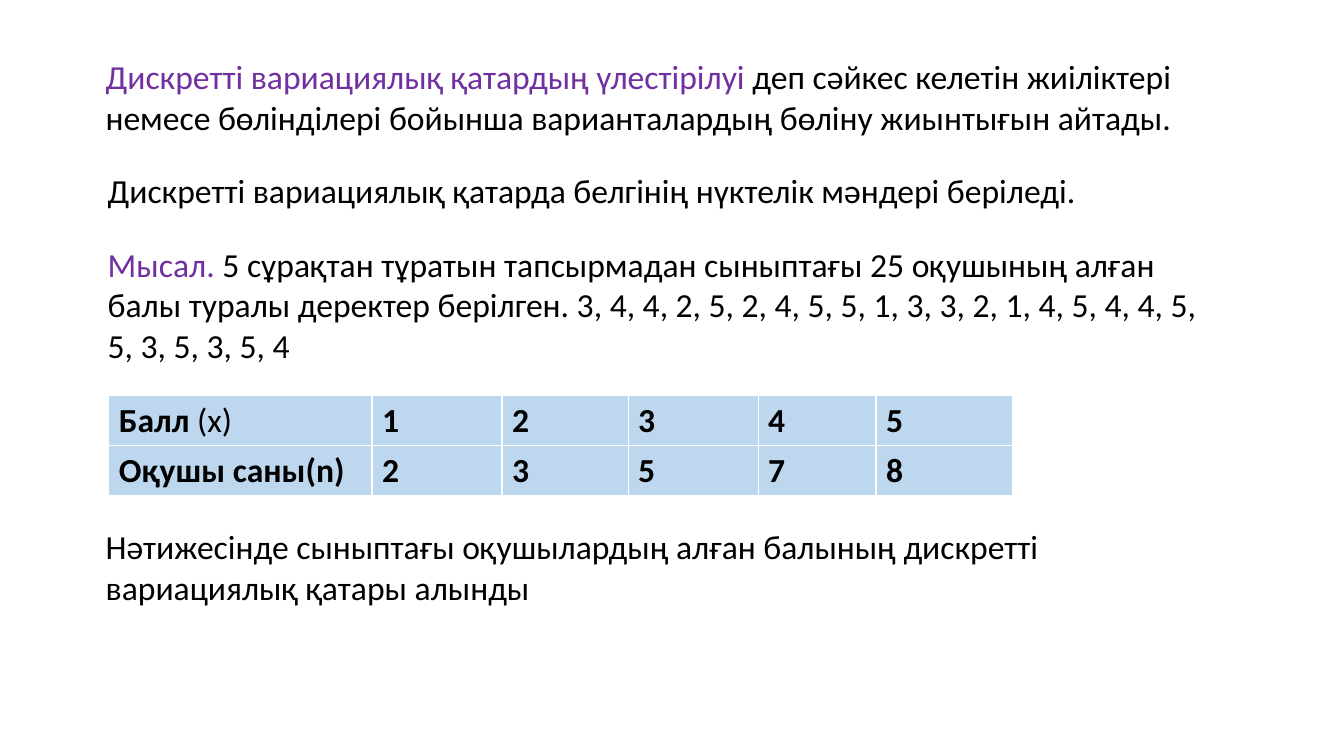
from dataclasses import dataclass

from lxml.etree import SubElement
from pptx import Presentation
from pptx.dml.color import RGBColor
from pptx.enum.text import MSO_AUTO_SIZE
from pptx.oxml.ns import qn
from pptx.util import Inches, Pt


@dataclass(frozen=True)
class Theme:
    font: str = "Calibri"
    size: int = 24
    text: str = "000000"
    accent: str = "7030A0"
    cell: str = "BDD7EE"
    border: str = "FFFFFF"
    border_width: int = 1


THEME = Theme()

# Each text: left, top, width, height, highlighted opening, remaining text
TEXTS = [
    (0.95, 0.51, 11.32, 0.91, "Дискретті вариациялық қатардың үлестірілуі ",
     "деп сәйкес келетін жиіліктері немесе бөлінділері бойынша "
     "варианталардың бөліну жиынтығын айтады."),
    (0.97, 1.64, 11.14, 0.5, "",
     "Дискретті вариациялық қатарда белгінің нүктелік мәндері беріледі."),
    (0.97, 2.37, 11.05, 1.31, "Мысал. ",
     "5 сұрақтан тұратын тапсырмадан сыныптағы 25 оқушының алған балы туралы "
     "деректер берілген. 3, 4, 4, 2, 5, 2, 4, 5, 5, 1, 3, 3, 2, 1, 4, 5, 4, 4, "
     "5, 5, 3, 5, 3, 5, 4"),
    (0.95, 5.17, 9.52, 0.91, "",
     "Нәтижесінде сыныптағы оқушылардың алған балының дискретті "
     "вариациялық қатары алынды"),
]

# Each row: bold label, plain label ending, values
SCORE_ROWS = [
    ("Балл ", "(х)", (1, 2, 3, 4, 5)),
    ("Оқушы саны(n)", "", (2, 3, 5, 7, 8)),
]
COLUMN_WIDTHS = (2.61, 1.29, 1.25, 1.29, 1.17, 1.35)
ROW_HEIGHT = 0.5


def add_run(p, text, color=THEME.text, bold=False):
    r = p.add_run()
    r.text = text
    r.font.name = THEME.font
    r.font.size = Pt(THEME.size)
    r.font.bold = bold
    r.font.color.rgb = RGBColor.from_string(color)


def add_text(s, left, top, width, height, opening, body):
    box = s.shapes.add_textbox(*map(Inches, (left, top, width, height)))
    tf = box.text_frame
    tf.word_wrap = True
    tf.auto_size = MSO_AUTO_SIZE.SHAPE_TO_FIT_TEXT
    p = tf.paragraphs[0]
    if opening:
        add_run(p, opening, THEME.accent)
    add_run(p, body)


def style_cell(cell):
    """Give the cell its borders, then its fill, in schema order."""
    tc_pr = cell._tc.get_or_add_tcPr()
    for side in ("a:lnL", "a:lnR", "a:lnT", "a:lnB"):
        line = SubElement(tc_pr, qn(side), w=str(Pt(THEME.border_width)))
        fill = SubElement(line, qn("a:solidFill"))
        SubElement(fill, qn("a:srgbClr"), val=THEME.border)
    cell.fill.solid()
    cell.fill.fore_color.rgb = RGBColor.from_string(THEME.cell)


def add_score_table(s, left, top):
    frame = s.shapes.add_table(
        len(SCORE_ROWS), len(COLUMN_WIDTHS), Inches(left), Inches(top),
        Inches(sum(COLUMN_WIDTHS)), Inches(ROW_HEIGHT * len(SCORE_ROWS)))
    table = frame.table
    for column, width in zip(table.columns, COLUMN_WIDTHS):
        column.width = Inches(width)
    for row, (label, ending, values) in zip(table.rows, SCORE_ROWS):
        row.height = Inches(ROW_HEIGHT)
        for cell, text in zip(row.cells, (label, *map(str, values))):
            style_cell(cell)
            add_run(cell.text_frame.paragraphs[0], text, bold=True)
        if ending:
            add_run(row.cells[0].text_frame.paragraphs[0], ending)


def main():
    prs = Presentation()
    prs.slide_width, prs.slide_height = Inches(13.33), Inches(7.5)
    s = prs.slides.add_slide(prs.slide_layouts[6])
    for text in TEXTS:
        add_text(s, *text)
    add_score_table(s, 1.08, 3.92)
    prs.save("out.pptx")


if __name__ == "__main__":
    main()
